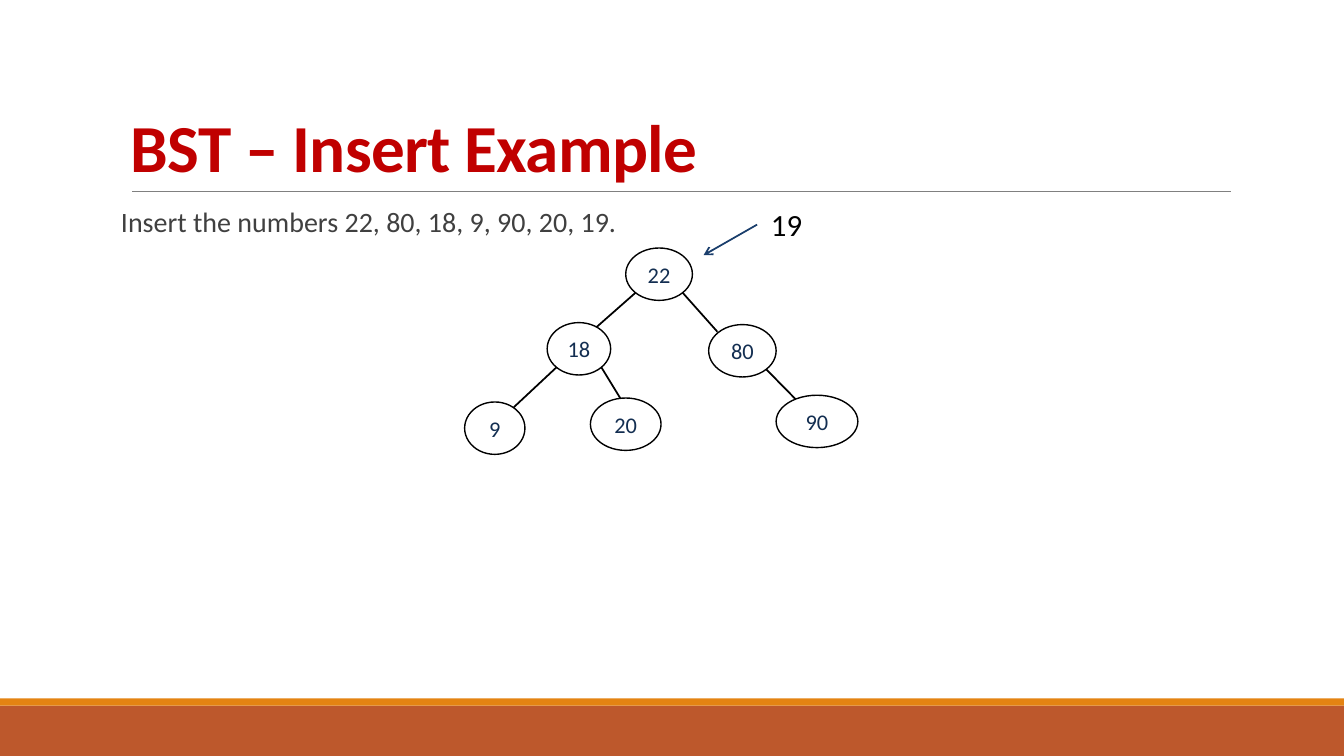
from dataclasses import dataclass

from lxml import etree
from pptx import Presentation
from pptx import util as u
from pptx.dml.color import RGBColor
from pptx.enum import shapes, text
from pptx.oxml.ns import qn


@dataclass(frozen=True)
class Theme:
    """Colours, font and type sizes of the slide."""
    font: str = "Calibri"
    title: str = "C00000"
    body: str = "404040"
    ink: str = "000000"
    paper: str = "FFFFFF"
    key: str = "132E51"
    pointer: str = "1A3E6C"
    rule: str = "808080"
    band: str = "BD582C"
    stripe: str = "E48312"
    title_size: float = 48
    body_size: float = 20
    key_size: float = 16
    new_key_size: float = 22


@dataclass(frozen=True)
class Node:
    """A tree node: its key, box, parent key and the point its edge reaches."""
    key: str
    left: float
    top: float
    width: float
    parent: str = ""
    edge_end: tuple = ()


NODE_HEIGHT = 1.32
DIAGONAL = 0.354
TREE = [
    Node("22", 15.77, 6.25, 1.68),
    Node("80", 17.86, 8.18, 1.7, "22", (18.08, 8.36)),
    Node("18", 13.79, 8.13, 1.6, "22", (14.99, 8.28)),
    Node("9", 11.71, 10.13, 1.52, "18", (12.95, 10.26)),
    Node("90", 19.56, 9.96, 2.06, "80", (20.12, 10.13)),
    Node("20", 14.88, 10.03, 1.78, "18", (15.77, 10.26)),
]


def write(frame, words, *, font, size, color, bold=False, align=None,
          line=None, before=None, after=None, tracking=None):
    """Put one formatted paragraph into a text frame."""
    paragraph = frame.paragraphs[0]
    paragraph.alignment = align
    paragraph.line_spacing = line
    if before is not None:
        paragraph.space_before = u.Pt(before)
    if after is not None:
        paragraph.space_after = u.Pt(after)
    run = paragraph.add_run()
    run.text = words
    run.font.name = font
    run.font.size = u.Pt(size)
    run.font.bold = bold
    run.font.color.rgb = RGBColor.from_string(color)
    if tracking is not None:
        run.font._element.set("spc", str(round(tracking * 100)))


class Painter:
    """Draws styled elements on the current slide, in centimetres."""

    def __init__(self, slide, theme):
        """Keep the slide and its theme."""
        self.slide = slide
        self.theme = theme

    def shape(self, kind, box, fill, line=None):
        """Add a filled preset shape."""
        item = self.slide.shapes.add_shape(kind, *map(u.Cm, box))
        item.shadow.inherit = False
        item.fill.solid()
        item.fill.fore_color.rgb = RGBColor.from_string(fill)
        if line:
            item.line.color.rgb = RGBColor.from_string(line)
            item.line.width = u.Pt(1)
        else:
            item.line.fill.background()
        return item

    def line(self, start, end, color, width, arrow=False):
        """Add a straight line, optionally with an arrowhead at its end."""
        item = self.slide.shapes.add_connector(
            shapes.MSO_CONNECTOR.STRAIGHT, *map(u.Cm, (*start, *end)))
        item.line.color.rgb = RGBColor.from_string(color)
        item.line.width = u.Pt(width)
        properties = item._element.spPr
        etree.SubElement(properties, qn("a:effectLst"))
        if arrow:
            etree.SubElement(properties.find(qn("a:ln")), qn("a:tailEnd"), type="arrow")

    def text(self, box, words, *, wrap=True, anchor=text.MSO_ANCHOR.TOP,
             side_inset=0.25, **style):
        """Add a text box."""
        frame = self.slide.shapes.add_textbox(*map(u.Cm, box)).text_frame
        frame.word_wrap = wrap
        frame.vertical_anchor = anchor
        frame.margin_left = frame.margin_right = u.Cm(side_inset)
        write(frame, words, font=self.theme.font, **style)

    def edge(self, parent, child):
        """Join a parent's lower diagonal point to its child."""
        x, y = parent.left + parent.width / 2, parent.top + NODE_HEIGHT / 2
        side = 1 if child.left > parent.left else -1
        start = x + side * DIAGONAL * parent.width, y + DIAGONAL * NODE_HEIGHT
        self.line(start, child.edge_end, self.theme.ink, 1.25)

    def node(self, node):
        """Add an ellipse holding a key."""
        box = node.left, node.top, node.width, NODE_HEIGHT
        ellipse = self.shape(shapes.MSO_SHAPE.OVAL, box, self.theme.paper, self.theme.ink)
        ellipse.text_frame.vertical_anchor = text.MSO_ANCHOR.MIDDLE
        write(ellipse.text_frame, node.key, font=self.theme.font,
              size=self.theme.key_size, color=self.theme.key,
              align=text.PP_ALIGN.CENTER)

    def tree(self, nodes):
        """Draw the edges and then the nodes over them."""
        by_key = {node.key: node for node in nodes}
        for node in nodes:
            if node.parent:
                self.edge(by_key[node.parent], node)
        for node in nodes:
            self.node(node)


def main():
    """Build and save the slide."""
    deck = Presentation()
    deck.slide_width, deck.slide_height = u.Cm(33.87), u.Cm(19.05)
    theme = Theme()
    painter = Painter(deck.slides.add_slide(deck.slide_layouts[6]), theme)

    painter.shape(shapes.MSO_SHAPE.RECTANGLE, (0, 17.78, 33.87, 1.27), theme.band)
    painter.shape(shapes.MSO_SHAPE.RECTANGLE, (0, 17.6, 33.87, 0.18), theme.stripe)
    painter.line((3.33, 4.83), (31.01, 4.83), theme.rule, 0.5)
    painter.text((3.05, 0.79, 27.94, 4.04), "BST – Insert Example",
                 anchor=text.MSO_ANCHOR.BOTTOM, size=theme.title_size,
                 color=theme.title, bold=True, line=0.85, tracking=-0.5)
    painter.text((3.05, 5.13, 27.94, 11.18),
                 "Insert the numbers 22, 80, 18, 9, 90, 20, 19.",
                 side_inset=0, size=theme.body_size, color=theme.body,
                 line=0.9, before=12, after=2)
    painter.tree(TREE)
    painter.text((19.18, 5.05, 1.4, 1.19), "19", wrap=False,
                 size=theme.new_key_size, color=theme.ink)
    painter.line((19.08, 5.66), (17.73, 6.43), theme.pointer, 1.25, arrow=True)
    deck.save("out.pptx")


if __name__ == "__main__":
    main()
